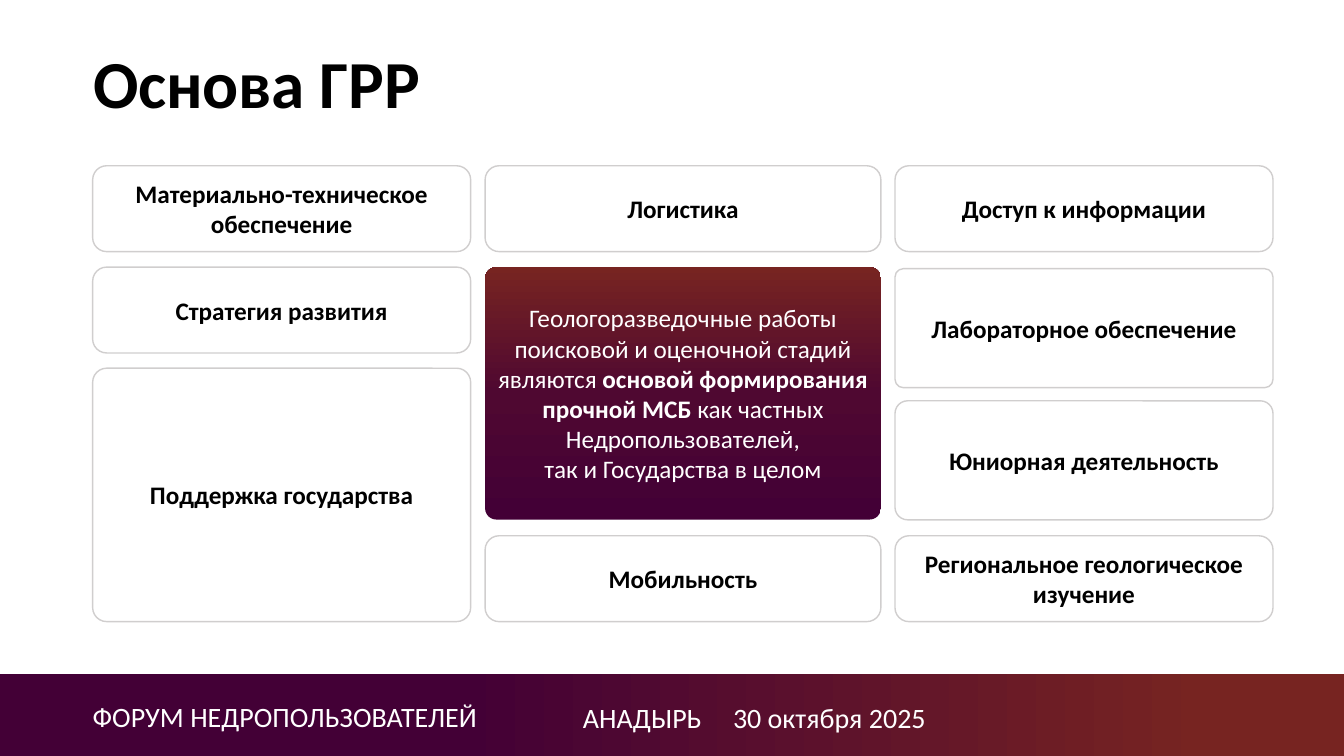
"""Build the slide on the foundations of geological exploration."""
from copy import deepcopy

from pptx import Presentation
from pptx.dml.color import RGBColor
from pptx.enum.shapes import MSO_SHAPE
from pptx.enum.text import MSO_ANCHOR, PP_ALIGN
from pptx.oxml.ns import qn
from pptx.util import Pt

RECT, ROUND = MSO_SHAPE.RECTANGLE, MSO_SHAPE.ROUNDED_RECTANGLE
LEFT, CENTER = PP_ALIGN.LEFT, PP_ALIGN.CENTER
TOP, MIDDLE = MSO_ANCHOR.TOP, MSO_ANCHOR.MIDDLE

WIDTH, HEIGHT = 960, 540
FONT = "Calibri"
BLACK, WHITE, GRAY = "000000", "FFFFFF", "D0CECE"
PLUM, WINE, RUST = "430036", "4F0831", "772421"
TITLE = "Основа ГРР"
FOOTER = [
    ("ФОРУМ НЕДРОПОЛЬЗОВАТЕЛЕЙ", 66.2, 499.7),
    ("АНАДЫРЬ", 416.4, 500.4),
    ("30 октября 2025", 523.6, 500.4),
]
CORE = [
    ("Геологоразведочные работы поисковой и оценочной стадий являются ", False),
    ("основой формирования прочной МСБ ", True),
    ("как частных Недропользователей,\nтак и Государства в целом", False),
]
# text, top, height, corner radius, side inset
COLUMNS = [
    (66.2, 270, [
        ("Материально-техническое обеспечение", 118.4, 61.3, 10, 3),
        ("Стратегия развития", 190.8, 61.3, 10, 6),
        ("Поддержка государства", 263, 181, 10, 6),
    ]),
    (346.5, 282.7, [
        ("Логистика", 118.4, 61.3, 10, 6),
        (CORE, 190.8, 180.3, 8, 6),
        ("Мобильность", 382.7, 61.3, 10, 6),
    ]),
    (639.3, 270, [
        ("Доступ к информации", 118.4, 61.3, 10, 6),
        ("Лабораторное обеспечение", 191.9, 85, 6, 6),
        ("Юниорная деятельность", 286.3, 85, 9, 6),
        ("Региональное геологическое изучение", 382.7, 61.3, 10, 6),
    ]),
]


def rgb(code):
    return RGBColor.from_string(code)


def write(shape, text, size=18, color=BLACK, bold=False, align=LEFT,
          anchor=TOP, inset=(0, 0), wrap=True, space=None):
    frame = shape.text_frame
    frame.word_wrap = wrap
    frame.vertical_anchor = anchor
    frame.margin_left = frame.margin_right = Pt(inset[0])
    frame.margin_top = frame.margin_bottom = Pt(inset[1])
    para = frame.paragraphs[0]
    para.alignment = align
    for words, heavy in [(text, bold)] if isinstance(text, str) else text:
        for index, line in enumerate(words.split("\n")):
            if index:
                para.add_line_break()
            run = para.add_run()
            run.text = line
            font = run.font
            font.name, font.size, font.bold = FONT, Pt(size), heavy
            font.color.rgb = rgb(color)
            if space is not None:
                run.font._element.set("spc", str(space))


def add_box(slide, kind, x, y, w, h):
    shape = slide.shapes.add_shape(kind, Pt(x), Pt(y), Pt(w), Pt(h))
    shape.shadow.inherit = False
    return shape


def blend(shape, stops, angle):
    fill = shape.fill
    fill.gradient()
    fill.gradient_angle = angle
    group = next(shape.element.iter(qn("a:gsLst")))
    for _ in stops[2:]:
        group.append(deepcopy(group[-1]))
    for stop, (place, color) in zip(fill.gradient_stops, stops):
        stop.position = place
        stop.color.rgb = rgb(color)
    shape.line.fill.background()


def add_text(slide, text, x, y, w, h, **style):
    write(slide.shapes.add_textbox(Pt(x), Pt(y), Pt(w), Pt(h)), text, **style)


def add_card(slide, x, w, text, y, h, radius, side):
    card = add_box(slide, ROUND, x, y, w, h)
    card.adjustments[0] = radius / h
    core = text is CORE
    if core:
        blend(card, [(0, PLUM), (0.5, WINE), (1, RUST)], 90)
    else:
        card.fill.background()
        card.line.color.rgb = rgb(GRAY)
        card.line.width = Pt(1)
    write(card, text, color=WHITE if core else BLACK, bold=True,
          align=CENTER, anchor=MIDDLE, inset=(side, 3.6))


def main():
    deck = Presentation()
    deck.slide_width, deck.slide_height = Pt(WIDTH), Pt(HEIGHT)
    slide = deck.slides.add_slide(deck.slide_layouts[6])
    band = add_box(slide, RECT, 0, 481.5, WIDTH, HEIGHT - 481.5)
    blend(band, [(0.34, PLUM), (0.9, RUST)], 0)
    for text, x, y in FOOTER:
        add_text(slide, text, x, y, 300, 25, size=20, color=WHITE, wrap=False)
    add_text(slide, TITLE, 66.5, 29.5, 842, 58, size=48, bold=True, space=-10)
    for x, w, cards in COLUMNS:
        for card in cards:
            add_card(slide, x, w, *card)
    deck.save("out.pptx")


if __name__ == "__main__":
    main()
